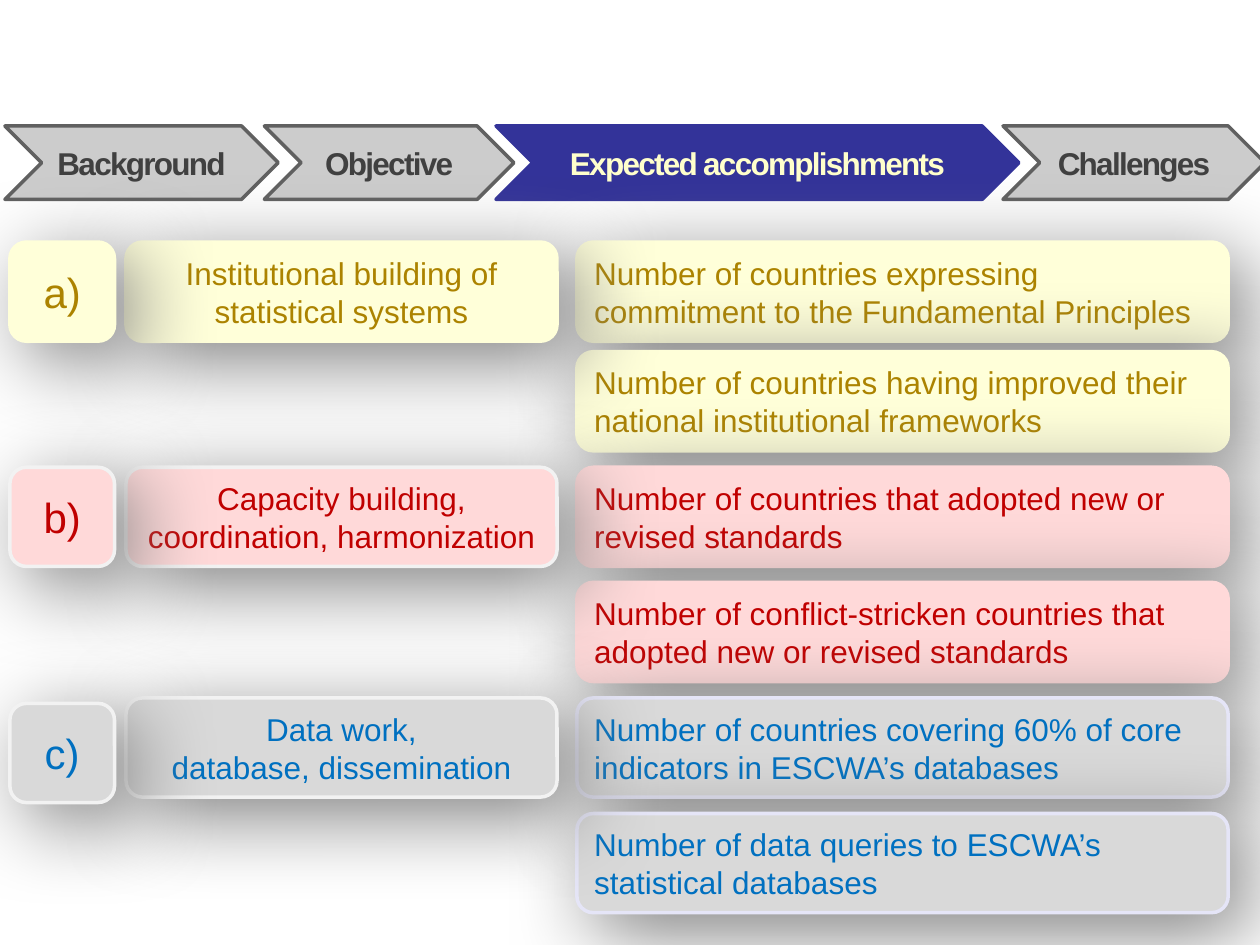
import lxml.etree
import pptx
import pptx.dml.color
import pptx.enum.shapes
import pptx.enum.text
import pptx.oxml.ns
import pptx.util

Cm = pptx.util.Cm
Pt = pptx.util.Pt
SHAPES = pptx.enum.shapes.MSO_SHAPE
ALIGN = pptx.enum.text.PP_ALIGN

# Label, left and width in cm
STEPS = [
    ("Objective", 5.33, 5.03),
    ("Expected accomplishments", 10, 10.54),
    ("Challenges", 20.22, 5.28),
    ("Background", 0.1, 5.51),
]
CURRENT_STEP = "Expected accomplishments"

BOX_HEIGHT = 2
# Left and width in cm
LETTER_COLUMN = (0.2, 2.11)
GOAL_COLUMN = (2.54, 8.69)
INDICATOR_COLUMN = (11.63, 13.13)

GOALS = [
    {
        "letter": "a)", "letter_top": 4.88,
        "goal": "Institutional building of statistical systems",
        "indicators": [
            (4.88, "Number of countries expressing commitment to the Fundamental Principles"),
            (7.09, "Number of countries having improved their national institutional frameworks"),
        ],
        "fill": "FFFFD9", "text": "AC8300",
        "goal_line": "FFFFD9", "indicator_line": "FFFFD9",
    },
    {
        "letter": "b)", "letter_top": 9.42,
        "goal": "Capacity building, coordination, harmonization",
        "indicators": [
            (9.42, "Number of countries that adopted new or revised standards"),
            (11.74, "Number of conflict-stricken countries that adopted new or revised standards"),
        ],
        "fill": "FFD9D9", "text": "C00000",
        "goal_line": "F2F2F2", "indicator_line": "FFD9D9",
    },
    {
        "letter": "c)", "letter_top": 14.18,
        "goal": "Data work,\ndatabase, dissemination",
        "indicators": [
            (14.07, "Number of countries covering 60% of core indicators in ESCWA’s databases"),
            (16.4, "Number of data queries to ESCWA’s statistical databases"),
        ],
        "fill": "D9D9D9", "text": "0070C0",
        "goal_line": "F2F2F2", "indicator_line": "E5E5F7",
    },
]


def color(hex_value):
    return pptx.dml.color.RGBColor.from_string(hex_value)


def set_attributes(target, values):
    for name, value in values.items():
        setattr(target, name, value)


def add_block(slide, kind, position, fill, line):
    shape = slide.shapes.add_shape(kind, *(Cm(length) for length in position))
    shape.shadow.inherit = False
    shape.fill.solid()
    shape.fill.fore_color.rgb = color(fill)
    shape.line.color.rgb = color(line)
    shape.line.width = Pt(2)
    return shape


def write_text(shape, text, text_color, alignment, font_values):
    frame = shape.text_frame
    set_attributes(frame, {
        "text": text,
        "word_wrap": True,
        "vertical_anchor": pptx.enum.text.MSO_ANCHOR.MIDDLE,
    })
    for paragraph in frame.paragraphs:
        paragraph.alignment = alignment
        for run in paragraph.runs:
            set_attributes(run.font, {"name": "Arial", **font_values})
            run.font.color.rgb = color(text_color)


def add_soft_shadow(shape):
    """Put a wide grey shadow to the lower right of the shape."""
    effects = shape._element.spPr.find(pptx.oxml.ns.qn("a:effectLst"))
    shadow = lxml.etree.SubElement(effects, pptx.oxml.ns.qn("a:outerShdw"), {
        "blurRad": str(Pt(50)), "dist": str(Pt(14.14)),
        "dir": "2700000", "algn": "tl", "rotWithShape": "0",
    })
    lxml.etree.SubElement(shadow, pptx.oxml.ns.qn("a:srgbClr"), {"val": "808080"})


def add_step(slide, label, left, width):
    if label == CURRENT_STEP:
        fill, line, text_color = "333399", "333399", "FFFFCC"
    else:
        fill, line, text_color = "CCCCCC", "606060", "404040"
    shape = add_block(slide, SHAPES.CHEVRON, (left, 2.54, width, 1.48), fill, line)
    set_attributes(shape.text_frame, {"margin_left": Cm(0.1), "margin_right": Cm(0.1)})
    write_text(shape, label, text_color, ALIGN.CENTER, {"size": Pt(18), "bold": True})
    for run in shape.text_frame.paragraphs[0].runs:
        run.font._element.set("spc", "-100")


def add_box(slide, column, top, text, goal, line, alignment=ALIGN.CENTER, size=18):
    left, width = column
    position = (left, top, width, BOX_HEIGHT)
    shape = add_block(slide, SHAPES.ROUNDED_RECTANGLE, position, goal["fill"], line)
    add_soft_shadow(shape)
    write_text(shape, text, goal["text"], alignment, {"size": Pt(size)})


def main():
    presentation = pptx.Presentation()
    set_attributes(presentation, {"slide_width": Cm(25.4), "slide_height": Cm(19.05)})
    slide = presentation.slides.add_slide(presentation.slide_layouts[6])

    for step in STEPS:
        add_step(slide, *step)
    # Each column is finished before the next, so shadows fall on the columns behind.
    for goal in GOALS:
        for top, text in goal["indicators"]:
            add_box(slide, INDICATOR_COLUMN, top, text, goal,
                    goal["indicator_line"], ALIGN.LEFT)
    for goal in GOALS:
        add_box(slide, GOAL_COLUMN, goal["indicators"][0][0], goal["goal"], goal,
                goal["goal_line"])
    for goal in GOALS:
        add_box(slide, LETTER_COLUMN, goal["letter_top"], goal["letter"], goal,
                goal["goal_line"], size=24)

    presentation.save("out.pptx")


if __name__ == "__main__":
    main()
